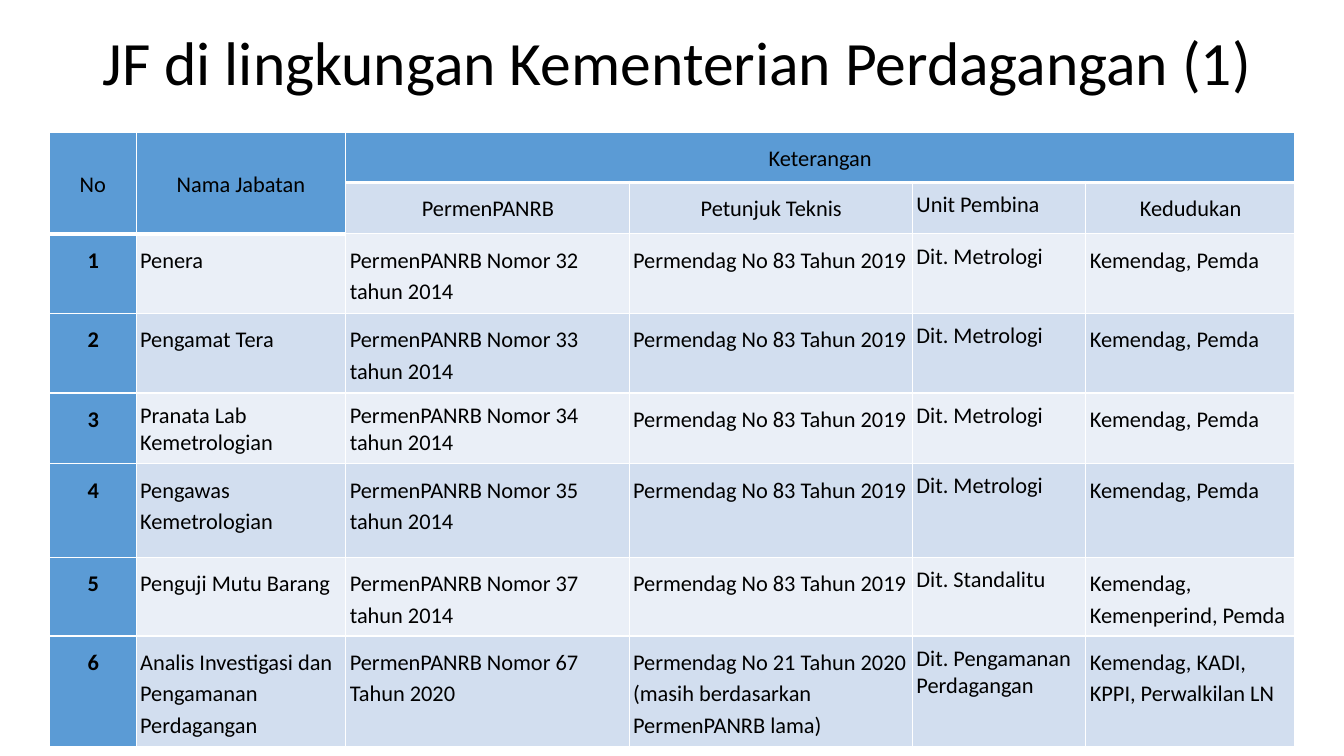
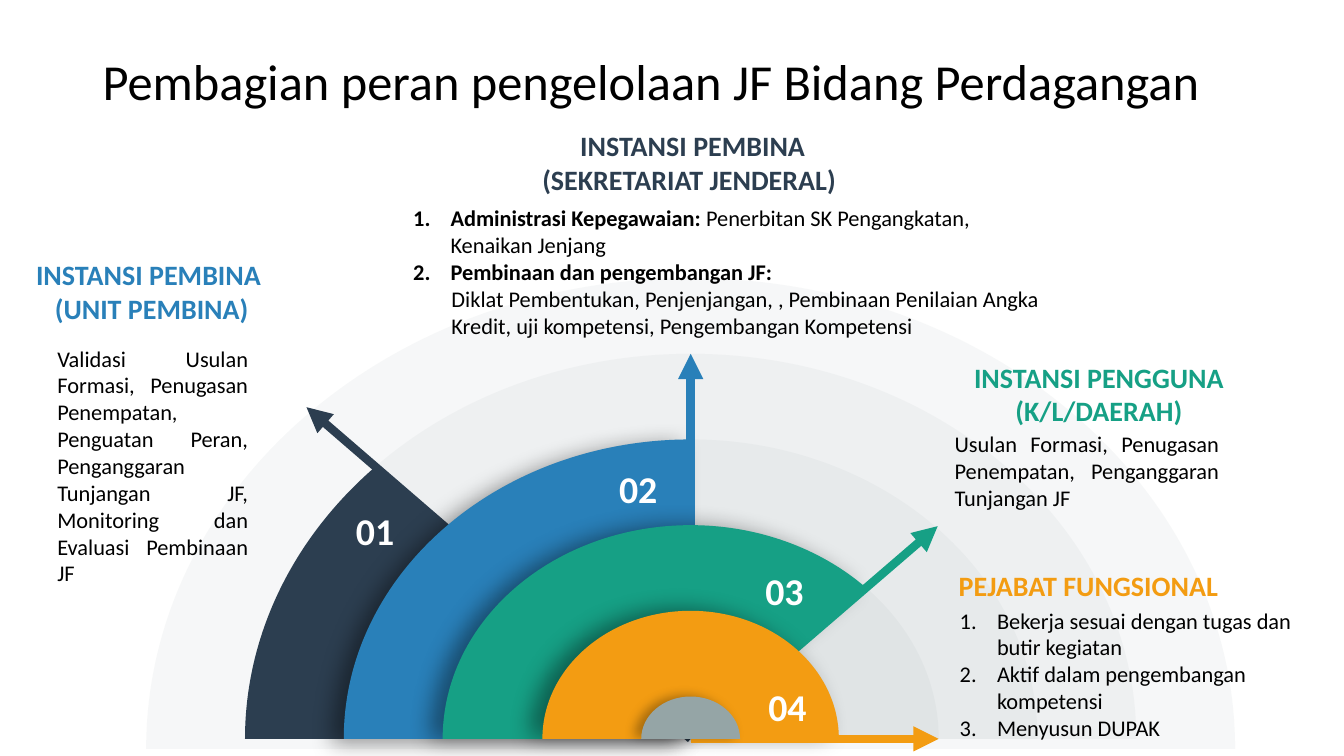
from math import cos, radians, sin, tan

from lxml.etree import SubElement as Sub
from pptx import Presentation
from pptx.dml.color import RGBColor
from pptx.enum.shapes import MSO_CONNECTOR as Conn
from pptx.enum.text import MSO_ANCHOR as Anchor, PP_ALIGN as Align
from pptx.oxml import parse_xml
from pptx.oxml.ns import nsdecls, qn
from pptx.util import Pt

PX = 9144
FONT = "Calibri"
INK, WHITE, GRAY = "000000", "FFFFFF", "95A5A6"
NAVY, BLUE, GREEN, GOLD = "2C3E50", "2980B9", "16A085", "F39C12"
HEAD, BANDS = "5B9BD5", ("EAEFF7", "D2DEEF")
LEFT, CENTER = Align.LEFT, Align.CENTER

# Slide 1: table
JOBS_TITLE = "JF di lingkungan Kementerian Perdagangan (1)"
COLS = [86, 208, 281, 281, 172, 207]
ROWS = [50, 51, 79, 79, 70, 93, 78, 110]
RULE, BOTH = "Permendag No 83 Tahun 2019", "Kemendag, Pemda"
JOBS = [
    ["No", "Nama Jabatan", "Keterangan", "", "", ""],
    ["", "", "PermenPANRB", "Petunjuk Teknis", "Unit Pembina", "Kedudukan"],
    ["1", "Penera", "PermenPANRB Nomor 32 tahun 2014", RULE, "Dit. Metrologi", BOTH],
    ["2", "Pengamat Tera", "PermenPANRB Nomor 33 tahun 2014", RULE, "Dit. Metrologi", BOTH],
    ["3", "Pranata Lab Kemetrologian", "PermenPANRB Nomor 34 tahun 2014", RULE,
     "Dit. Metrologi", BOTH],
    ["4", "Pengawas Kemetrologian", "PermenPANRB Nomor 35 tahun 2014", RULE,
     "Dit. Metrologi", BOTH],
    ["5", "Penguji Mutu Barang", "PermenPANRB Nomor 37 tahun 2014", RULE,
     "Dit. Standalitu", "Kemendag, Kemenperind, Pemda"],
    ["6", "Analis Investigasi dan Pengamanan Perdagangan",
     "PermenPANRB Nomor 67 Tahun 2020",
     "Permendag No 21 Tahun 2020 (masih berdasarkan PermenPANRB lama)",
     "Dit. Pengamanan Perdagangan", "Kemendag, KADI, KPPI, Perwalkilan LN"],
]
MERGES = [((0, 0), (1, 0)), ((0, 1), (1, 1)), ((0, 2), (0, 5))]
TIGHT = {(4, 1), (4, 2)} | {(row, 4) for row in range(1, len(JOBS))}

# Slide 2: fan of rings
ROLES_TITLE = "Pembagian peran pengelolaan JF Bidang Perdagangan"
MID, BASE = 685, 733
DOMES = [(5, 8, 743), (4, 8, BASE), (3, 8, BASE), (2, 8, BASE), (1, 10, BASE),
         (0, None, BASE)]
# ring, end angle, colour, shadow (alpha, blur, distance, direction), arrow tip
SECTORS = [
    (4, 135, NAVY, None, (304, 404)),
    (3, 90, BLUE, (40, 16, 9, 160), (685, 351)),
    (2, 45, GREEN, (40, 16, 9, 180), (930, 522)),
    (1, 0, GOLD, (40, 16, 9, 190), (931, 733)),
    (0, 0, GRAY, (30, 8, 5, 190), None),
]
MARKS = [("04", 752, 673), ("03", 749, 558), ("02", 604, 457), ("01", 343, 498)]
HEADS = [
    ([("INSTANSI PEMBINA", CENTER), ("(SEKRETARIAT JENDERAL)", LEFT)],
     NAVY, (528, 122, 318, 77)),
    ([("INSTANSI PEMBINA ", CENTER), ("(UNIT PEMBINA)", CENTER)], BLUE, (-32, 250, 365, 77)),
    ([("INSTANSI PENGGUNA (K/L/DAERAH)", CENTER)], GREEN, (922, 352, 336, 77)),
    ([("PEJABAT FUNGSIONAL", LEFT)], GOLD, (941, 558, 282, 44)),
]
# each paragraph: kind, bold lead, plain text
BODIES = [
    ((400, 198, 643, 199), [
        ("num", "Administrasi Kepegawaian: ", "Penerbitan SK Pengangkatan, Kenaikan Jenjang"),
        ("num", "Pembinaan dan pengembangan JF:", ""),
        ("inset", "", "Diklat Pembentukan, Penjenjangan, , Pembinaan Penilaian Angka Kredit, "
                      "uji kompetensi, Pengembangan Kompetensi")]),
    ((47, 337, 209, 252), [
        ("just", "", "Validasi Usulan Formasi, Penugasan Penempatan, Penguatan Peran, "
                     "Penganggaran Tunjangan JF, Monitoring dan Evaluasi Pembinaan JF")]),
    ((937, 422, 282, 91), [
        ("just", "", "Usulan Formasi, Penugasan Penempatan, Penganggaran Tunjangan JF")]),
    ((942, 597, 375, 145), [
        ("num", "", "Bekerja sesuai dengan tugas dan butir kegiatan"),
        ("num", "", "Aktif dalam pengembangan kompetensi"),
        ("num", "", "Menyusun DUPAK")]),
]


def px(*vals):
    return [round(val * PX) for val in vals]


def rgb(tone):
    return RGBColor.from_string(tone)


def put(obj, **vals):
    """Set each named value as an attribute of obj."""
    for name, val in vals.items():
        setattr(obj, name, val)


def paint(fill, tone):
    fill.solid()
    fill.fore_color.rgb = rgb(tone)


def write(para, text, size, tone=INK, bold=False):
    run = para.add_run()
    run.text = text
    put(run.font, name=FONT, size=Pt(size), bold=bold)
    run.font.color.rgb = rgb(tone)


def frame(slide, area, anchor=Anchor.TOP, wrap=True):
    box = slide.shapes.add_textbox(*px(*area)).text_frame
    put(box, word_wrap=wrap, vertical_anchor=anchor)
    return box


def paras(box, count):
    """Return count paragraphs of a fresh text frame."""
    return [box.paragraphs[0]] + [box.add_paragraph() for _ in range(count - 1)]


def title(slide, text, size, area):
    para = frame(slide, area, Anchor.MIDDLE).paragraphs[0]
    para.line_spacing = 0.9
    write(para, text, size)


def border(cell, foot):
    """Draw white cell borders; foot is the width of the lower one."""
    props = cell._tc.get_or_add_tcPr()
    for spot, (side, wide) in enumerate([("L", 1), ("R", 1), ("T", 1), ("B", foot)]):
        props.insert(spot, parse_xml(
            f'<a:ln{side} {nsdecls("a")} w="{Pt(wide)}"><a:solidFill>'
            f'<a:srgbClr val="{WHITE}"/></a:solidFill></a:ln{side}>'))


def fill_cell(cell, row, col, text):
    top = row == 0
    edge = (10, 9, 10, 10) if top else (4, 9, 3, 7)
    sides = ("margin_left", "margin_top", "margin_right", "margin_bottom")
    put(cell, vertical_anchor=Anchor.MIDDLE if top else Anchor.TOP, **dict(zip(sides, px(*edge))))
    lead = top or col == 0 or (row == 1 and col == 1)
    paint(cell.fill, HEAD if lead else BANDS[row % 2])
    border(cell, 3 if top or (row == 1 and col < 2) else 1)
    if not text:
        return
    para = cell.text_frame.paragraphs[0]
    if (row, col) not in TIGHT:
        mid = row < 2 or col == 0
        put(para, line_spacing=1.15, space_after=Pt(10), alignment=CENTER if mid else LEFT)
    write(para, text, 16, bold=row > 1 and col == 0)


def jobs(slide):
    title(slide, JOBS_TITLE, 44, (92, 20, 1164, 91))
    area = px(49, 131, sum(COLS), sum(ROWS))
    table = slide.shapes.add_table(len(ROWS), len(COLS), *area).table
    put(table, first_row=False, horz_banding=False)
    for col, wide in zip(table.columns, px(*COLS)):
        col.width = wide
    for row, high in zip(table.rows, px(*ROWS)):
        row.height = high
    for start, end in MERGES:
        table.cell(*start).merge(table.cell(*end))
    for row, line in enumerate(JOBS):
        for col, text in enumerate(line):
            fill_cell(table.cell(row, col), row, col, text)


def bend(shape, count):
    """Turn the first count triples of line points into Bézier curves."""
    lines = list(shape.element.iter(qn("a:lnTo")))
    for spot in range(0, 3 * count, 3):
        first, *rest = lines[spot:spot + 3]
        first.tag = qn("a:cubicBezTo")
        for line in rest:
            first.append(line[0])
            line.getparent().remove(line)


def sector(slide, ring, end, tone, base=BASE, alpha=None, shade=None):
    """Draw a ring's slice from the left base line round to the end angle."""
    wide, high = round(49 + 98.3 * ring), 42 + 85 * ring

    def spot(deg, pull=0):
        """Point on the arc, moved along its tangent by pull."""
        x, y = cos(radians(deg)), sin(radians(deg))
        return px(MID + wide * (x + pull * y), base - high * (y - pull * x))

    stops = [180] + [deg for deg in (90, 0) if deg > end] + [end]
    points = []
    for start, stop in zip(stops, stops[1:]):
        pull = 4 / 3 * tan(radians(start - stop) / 4)
        points += [spot(start, pull), spot(stop, -pull), spot(stop)]
    if end:
        points.append(px(MID, base))
    pen = slide.shapes.build_freeform(*spot(180), scale=1.0)
    pen.add_line_segments(points, close=True)
    shape = pen.convert_to_shape()
    bend(shape, len(stops) - 1)
    paint(shape.fill, tone)
    shape.line.fill.background()
    shape.shadow.inherit = False
    props = shape.element.spPr
    if alpha:
        Sub(next(props.iter(qn("a:srgbClr"))), qn("a:alpha"), val=str(alpha * 1000))
    if shade:
        dark, blur, dist, way = shade
        cast = Sub(props.find(qn("a:effectLst")), qn("a:outerShdw"), blurRad=str(Pt(blur)),
                   dist=str(Pt(dist)), dir=str(way * 60000), rotWithShape="0")
        Sub(Sub(cast, qn("a:srgbClr"), val=INK), qn("a:alpha"), val=str(dark * 1000))


def arrow(slide, tip, tone):
    line = slide.shapes.add_connector(Conn.STRAIGHT, *px(MID, BASE, *tip))
    line.line.width = Pt(6)
    paint(line.line.fill, tone)
    props = line.element.spPr
    Sub(props.find(qn("a:ln")), qn("a:tailEnd"), type="triangle")
    Sub(props, qn("a:effectLst"))


def indent(para, kind):
    if kind == "just":
        para.alignment = Align.JUSTIFY
        return
    left, hang = px(37, -37) if kind == "num" else px(38, 0)
    props = para._p.get_or_add_pPr()
    props.set("marL", str(left))
    props.set("indent", str(hang))
    if kind == "num":
        Sub(props, qn("a:buFont"), typeface="+mj-lt")
        Sub(props, qn("a:buAutoNum"), type="arabicPeriod")


def roles(slide):
    title(slide, ROLES_TITLE, 36, (92, 35, 1150, 97))
    for ring, alpha, base in DOMES:
        sector(slide, ring, 0, GRAY, base, alpha)
    for ring, end, tone, shade, tip in SECTORS:
        sector(slide, ring, end, tone, shade=shade)
        if tip:
            arrow(slide, tip, tone)
    for text, left, top in MARKS:
        para = frame(slide, (left, top, 58, 56), Anchor.MIDDLE, False).paragraphs[0]
        para.alignment = CENTER
        write(para, text, 27, WHITE, True)
    for lines, tone, area in HEADS:
        box = frame(slide, area, Anchor.BOTTOM)
        for para, (text, align) in zip(paras(box, len(lines)), lines):
            para.alignment = align
            write(para, text, 20, tone, True)
    for area, items in BODIES:
        box = frame(slide, area)
        for para, (kind, lead, text) in zip(paras(box, len(items)), items):
            indent(para, kind)
            for part, bold in ((lead, True), (text, False)):
                if part:
                    write(para, part, 16, bold=bold)


def main():
    deck = Presentation()
    put(deck, **dict(zip(("slide_width", "slide_height"), px(1333, 750))))
    for draw in (jobs, roles):
        draw(deck.slides.add_slide(deck.slide_layouts[6]))
    deck.save("out.pptx")


if __name__ == "__main__":
    main()
